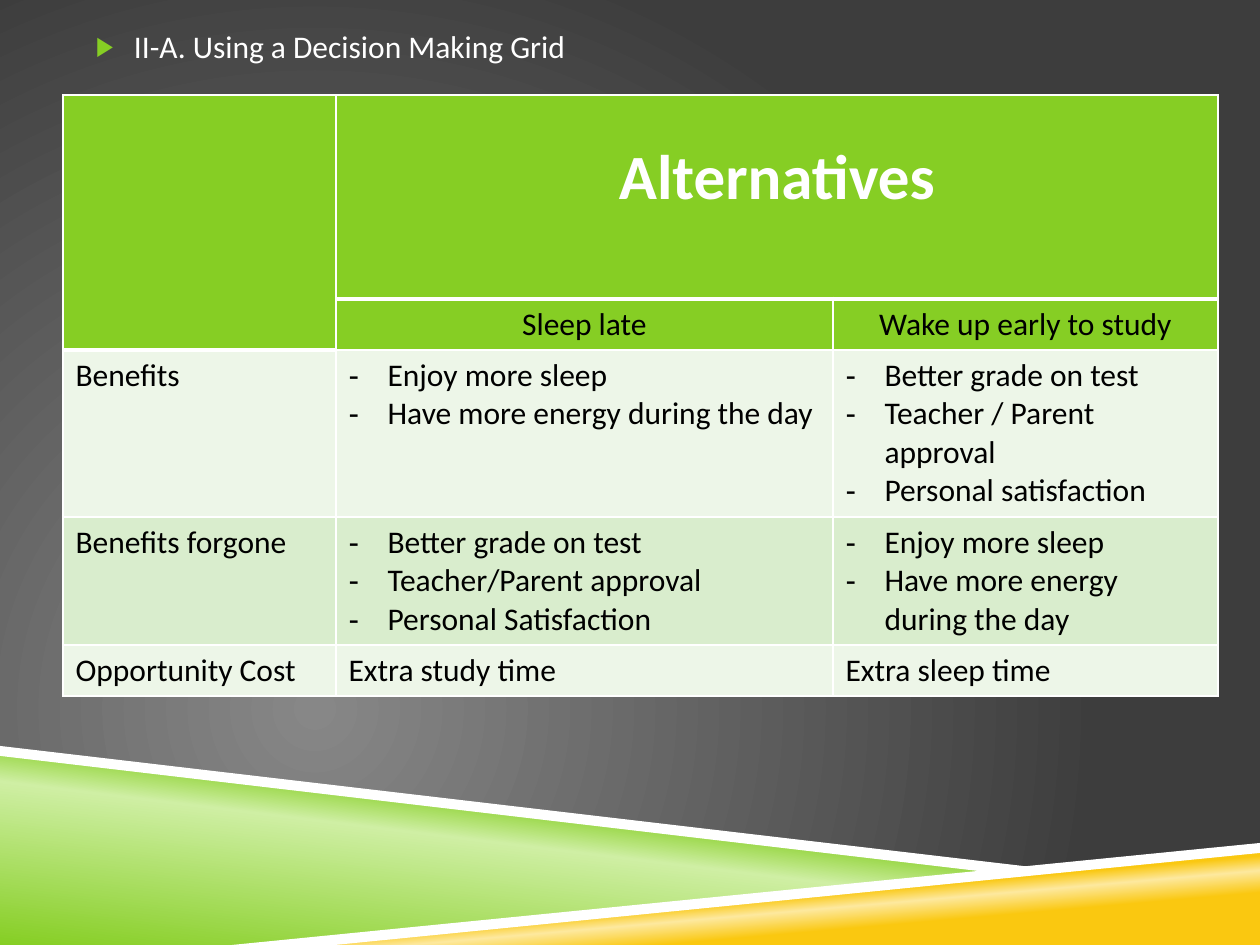
import lxml.etree
import pptx
import pptx.dml.color
import pptx.enum.text
import pptx.oxml.ns
import pptx.util

PX = 9144000 / 1260
WHITE, BLACK, GREEN, GOLD = "FFFFFF", "000000", "86CE24", "FAC810"
PALE, LIGHT = "EDF6E8", "D9EDCD"
CENTER = pptx.enum.text.PP_ALIGN.CENTER
qn = pptx.oxml.ns.qn


def emu(px):
    return pptx.util.Emu(round(px * PX))


def rgb(code):
    return pptx.dml.color.RGBColor.from_string(code)


def put(item, vals):
    for name, val in vals.items():
        setattr(item, name, val)


def node(up, tag, **vals):
    return lxml.etree.SubElement(up, qn(tag), {k: str(v) for k, v in vals.items()})


def bullet(para, sign, left, hang, color=None, size=None):
    """Add a hanging bullet; call before the font is set."""
    props = para._p.get_or_add_pPr()
    props.set("marL", str(emu(left)))
    props.set("indent", str(-emu(hang)))
    if color:
        node(node(props, "a:buClr"), "a:srgbClr", val=color)
    if size:
        node(props, "a:buSzPct", val=size * 1000)
    node(props, "a:buFont", typeface="Arial")
    node(props, "a:buChar", char=sign)


def blend(fill, root, stops, angle=None, focus=None):
    """Fill with stops of (percent, colour), along an angle or around a focus."""
    fill.gradient()
    grad = root.find(".//" + qn("a:gradFill"))
    for part in list(grad):
        grad.remove(part)
    marks = node(grad, "a:gsLst")
    for pos, color in stops:
        node(node(marks, "a:gs", pos=pos * 1000), "a:srgbClr", val=color)
    if focus:
        ring = node(grad, "a:path", path="circle")
        node(ring, "a:fillToRect", **{k: v * 1000 for k, v in focus.items()})
    else:
        node(grad, "a:lin", ang=angle * 60000, scaled=0)


class Deck:
    font = {"name": "Calibri", "size": pptx.util.Pt(18), "bold": False}

    def __init__(self):
        self.file = pptx.Presentation()
        put(self.file, {"slide_width": emu(1260), "slide_height": emu(945)})
        self.slide = self.file.slides.add_slide(self.file.slide_layouts[1])
        title = self.slide.shapes.title.element
        title.getparent().remove(title)

    def style(self, para, color, **vals):
        put(para.font, {**self.font, **vals})
        para.font.color.rgb = rgb(color)

    def back(self, stops, focus):
        blend(self.slide.background.fill, self.slide.element, stops, focus=focus)

    def band(self, points, color=None, stops=None, angle=None):
        pen = self.slide.shapes.build_freeform(*points[0], scale=PX)
        pen.add_line_segments(points[1:], close=True)
        shape = pen.convert_to_shape()
        shape.shadow.inherit = False
        shape.line.fill.background()
        if stops:
            blend(shape.fill, shape.element, stops, angle)
        else:
            shape.fill.solid()
            shape.fill.fore_color.rgb = rgb(color)

    def body(self, text, left, top, width, height):
        box = self.slide.placeholders[1]
        put(box, {"left": emu(left), "top": emu(top),
                  "width": emu(width), "height": emu(height)})
        put(box.text_frame, {"margin_left": 0, "margin_right": 0})
        para = box.text_frame.paragraphs[0]
        put(para, {"text": text, "level": 1, "space_before": pptx.util.Pt(0)})
        bullet(para, "▶", 102, 38, GREEN, 85)
        self.style(para, WHITE)

    def grid(self, left, top, cols, rows):
        frame = self.slide.shapes.add_table(
            len(rows), len(cols), emu(left), emu(top), emu(sum(cols)), emu(sum(rows)))
        table = frame.table
        put(table, {"first_row": False, "horz_banding": False})
        for col, width in zip(table.columns, cols):
            col.width = emu(width)
        for row, height in zip(table.rows, rows):
            row.height = emu(height)
        return table

    def cell(self, cell, lines, fill, edges, align=None, color=BLACK, **font):
        """Write a cell; a list of lines is bulleted, a string is plain."""
        cell.fill.solid()
        cell.fill.fore_color.rgb = rgb(fill)
        props = cell._tc.get_or_add_tcPr()
        for i, (side, width) in enumerate(zip("LRTB", edges)):
            line = node(props, "a:ln" + side, w=pptx.util.Pt(width))
            node(node(line, "a:solidFill"), "a:srgbClr", val=WHITE)
            props.insert(i, line)
        if not lines:
            return
        plain = isinstance(lines, str)
        cell.text = lines if plain else "\n".join(lines)
        for para in cell.text_frame.paragraphs:
            if align:
                para.alignment = align
            if not plain:
                bullet(para, "-", 39, 39)
            self.style(para, color, **font)


def main():
    deck = Deck()
    deck.back([(0, "878787"), (100, "3D3D3D")], {"l": 50, "t": 100, "r": 100, "b": 50})
    deck.band([(0, 752), (998, 872), (252, 945), (0, 945)], angle=277,
              stops=[(0, GREEN), (52, "CFEFA4"), (66, GREEN)])
    deck.band([(249, 945), (1260, 847), (1260, 945)], angle=265,
              stops=[(28, GOLD), (40, "FDE99F"), (48, GOLD)])
    deck.band([(0, 746), (0, 756), (995, 873), (1048, 869)], WHITE)
    deck.band([(1260, 843), (232, 945), (335, 945), (1260, 853)], WHITE)
    deck.body("II-A. Using a Decision Making Grid", 32, 21, 1071, 514)

    rows = [
        ("", "Alternatives", ""),
        ("", "Sleep late", "Wake up early to study"),
        ("Benefits",
         ["Enjoy more sleep", "Have more energy during the day"],
         ["Better grade on test", "Teacher / Parent approval", "Personal satisfaction"]),
        ("Benefits forgone",
         ["Better grade on test", "Teacher/Parent approval", "Personal Satisfaction"],
         ["Enjoy more sleep", "Have more energy during the day"]),
        ("Opportunity Cost", "Extra study time", "Extra sleep time"),
    ]
    fills = [GREEN, GREEN, PALE, LIGHT, PALE]
    heavy = {(1, 0), (1, 1), (1, 2), (2, 0)}  # thick rules: (row edge, column)
    table = deck.grid(63, 95, [273, 497, 385], [204, 51, 167, 128, 51])
    table.cell(0, 0).merge(table.cell(1, 0))
    table.cell(0, 1).merge(table.cell(0, 2))
    for r, row in enumerate(rows):
        look = {"align": CENTER} if r < 2 else {}
        if r == 0:
            look.update(color=WHITE, size=pptx.util.Pt(36), bold=True)
        for c, lines in enumerate(row):
            rules = [3 if (edge, c) in heavy else 1 for edge in (r, r + 1)]
            deck.cell(table.cell(r, c), lines, fills[r], [1, 1, *rules], **look)
    table.cell(0, 1).margin_top = emu(44)
    deck.file.save("out.pptx")


if __name__ == "__main__":
    main()
